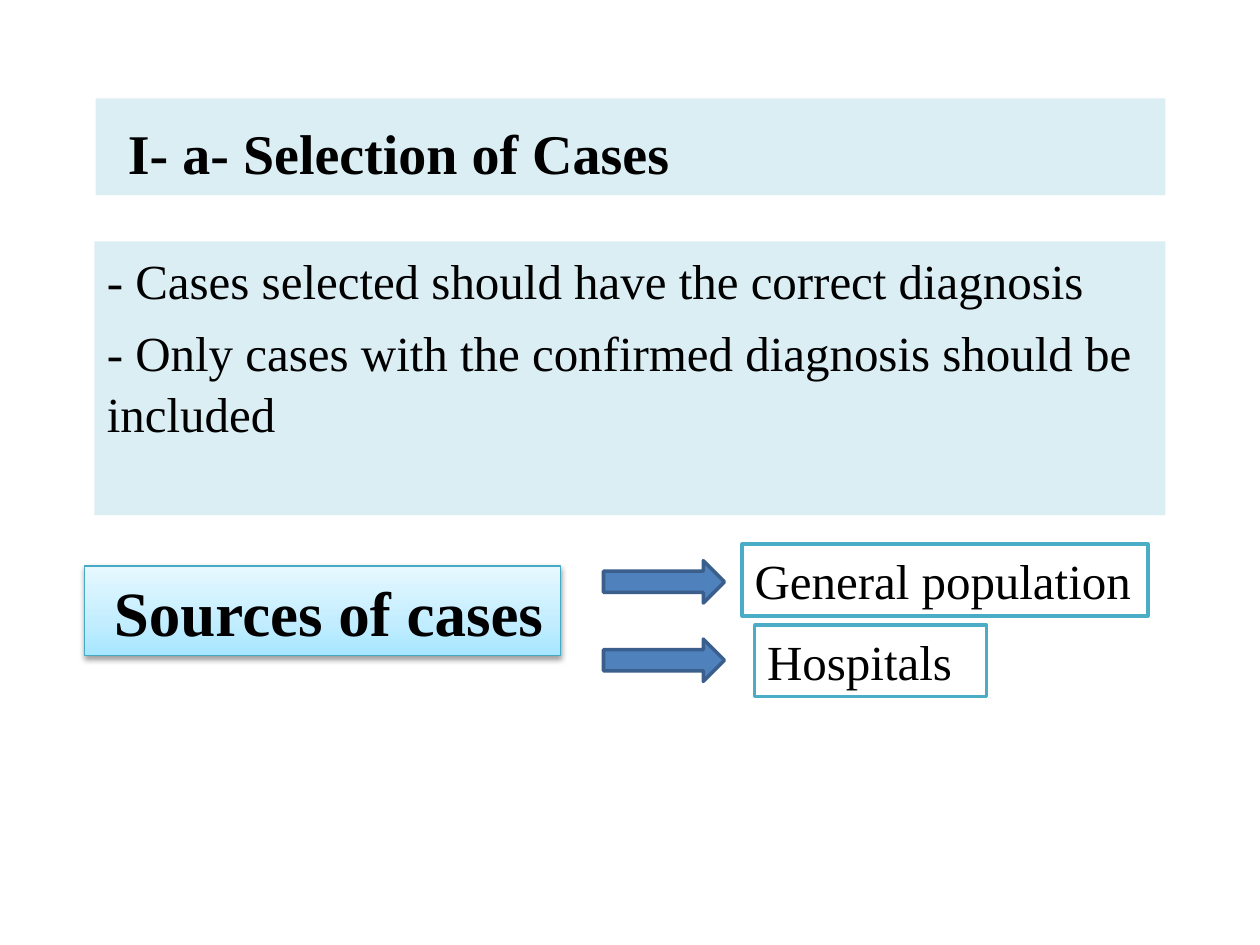
import copy
from dataclasses import dataclass

import lxml.etree
import pptx
import pptx.dml.color
import pptx.enum.shapes
import pptx.enum.text
import pptx.oxml.ns
import pptx.util

Pt = pptx.util.Pt
RGBColor = pptx.dml.color.RGBColor
Shape = pptx.enum.shapes.MSO_SHAPE
Anchor = pptx.enum.text.MSO_ANCHOR
qn = pptx.oxml.ns.qn


@dataclass
class Theme:
    font: str = "Times New Roman"
    text: str = "000000"
    panel: str = "DBEEF4"
    white: str = "FFFFFF"
    box_line: str = "4BACC6"
    arrow: str = "4F81BD"
    arrow_line: str = "3A5F8C"
    source_line: str = "46AAC5"
    source_stops: tuple = ((0, "A7E6FF"), (0.35, "C1EDFF"), (1, "E7F8FF"))
    title_size: int = 32
    source_size: int = 36
    body_size: int = 28


theme = Theme()


def add_block(kind, bounds, fill, line=None, width=2):
    shape = slide.shapes.add_shape(kind, *[Pt(length) for length in bounds])
    shape.shadow.inherit = False
    shape.fill.solid()
    shape.fill.fore_color.rgb = RGBColor.from_string(fill)
    if line:
        shape.line.color.rgb = RGBColor.from_string(line)
        shape.line.width = Pt(width)
    else:
        shape.line.fill.background()
    return shape


def write_text(shape, *texts, size=theme.body_size, bold=False, wrap=True,
               anchor=Anchor.BOTTOM, left=7.2, top=3.6, bottom=3.6,
               line_spacing=None, gap=0):
    frame = shape.text_frame
    frame.word_wrap = wrap
    frame.vertical_anchor = anchor
    frame.margin_left, frame.margin_top, frame.margin_bottom = Pt(left), Pt(top), Pt(bottom)
    for index, text in enumerate(texts):
        paragraph = frame.add_paragraph() if index else frame.paragraphs[0]
        paragraph.alignment = pptx.enum.text.PP_ALIGN.LEFT
        paragraph.line_spacing = line_spacing
        if index:
            paragraph.space_before = Pt(gap)
        run = paragraph.add_run()
        run.text = text
        run.font.name = theme.font
        run.font.size = Pt(size)
        run.font.bold = bold
        run.font.color.rgb = RGBColor.from_string(theme.text)


presentation = pptx.Presentation()
presentation.slide_width, presentation.slide_height = Pt(720), Pt(540)
slide = presentation.slides.add_slide(presentation.slide_layouts[6])

# Title band
title = add_block(Shape.RECTANGLE, (54.7, 56.2, 611.3, 55.4), theme.panel)
write_text(title, "I- a- Selection of Cases", size=theme.title_size, bold=True,
           left=18.4, bottom=5.3)

# Selection criteria
criteria = add_block(Shape.RECTANGLE, (54, 138, 612, 156.4), theme.panel)
write_text(criteria,
           "- Cases selected should have the correct diagnosis",
           "- Only cases with the confirmed diagnosis should be included",
           anchor=Anchor.TOP, line_spacing=1.05, gap=5.6)

# Sources heading with gradient and soft shadow
sources = add_block(Shape.RECTANGLE, (48.2, 323.4, 272.2, 51.1), theme.white,
                    theme.source_line, 0.75)
sources.fill.gradient()
sources.fill.gradient_angle = 90
stop_list = sources._element.spPr.find(qn("a:gradFill")).find(qn("a:gsLst"))
stop_list.insert(1, copy.deepcopy(stop_list[0]))
for stop, (position, color) in zip(sources.fill.gradient_stops, theme.source_stops):
    stop.position = position
    stop.color.rgb = RGBColor.from_string(color)

effects = sources._element.spPr.find(qn("a:effectLst"))
shadow = lxml.etree.SubElement(effects, qn("a:outerShdw"), blurRad=str(Pt(3.1)),
                               dist=str(Pt(1.6)), dir="5400000", rotWithShape="0")
shadow_color = lxml.etree.SubElement(shadow, qn("a:srgbClr"), val=theme.text)
lxml.etree.SubElement(shadow_color, qn("a:alpha"), val="38000")
write_text(sources, "Sources of cases", size=theme.source_size, bold=True,
           wrap=False, left=16.9)

# Arrows to each source
for text, arrow_top, left, top, width in (
    ("General population", 320.4, 424.1, 311, 231.8),
    ("Hospitals", 365.2, 431.3, 357.1, 132.5),
):
    add_block(Shape.RIGHT_ARROW, (344.9, arrow_top, 69.1, 24.2), theme.arrow, theme.arrow_line)
    box = add_block(Shape.RECTANGLE, (left, top, width, 41), theme.white, theme.box_line)
    write_text(box, text, wrap=False)

presentation.save("out.pptx")
